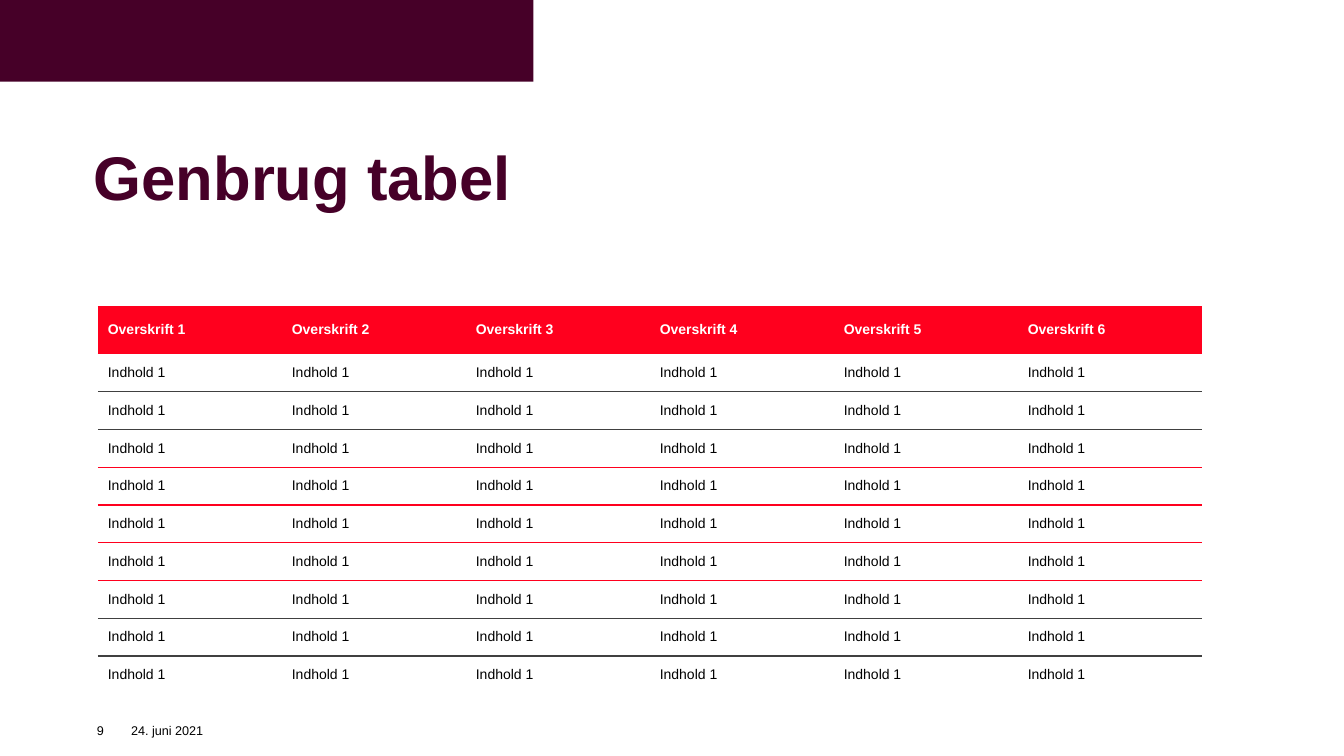
from lxml import etree
from pptx import Presentation
from pptx.dml.color import RGBColor
from pptx.enum.shapes import MSO_SHAPE
from pptx.enum.text import MSO_ANCHOR
from pptx.oxml.ns import qn
from pptx.util import Inches, Pt

TITLE = "Genbrug tabel"
DATE = "24. juni 2021"
PAGE = "9"
HEADS = [f"Overskrift {n}" for n in range(1, 7)]
BODY = [["Indhold 1"] * len(HEADS) for _ in range(9)]

PLUM = RGBColor(0x46, 0x00, 0x28)
RED = RGBColor(0xFF, 0x00, 0x1E)
GREY = RGBColor(0x40, 0x40, 0x40)
BLACK = RGBColor(0, 0, 0)
WHITE = RGBColor(0xFF, 0xFF, 0xFF)
# Line under each row; the last row has none
RULES = [RED, GREY, GREY, RED, RED, RED, RED, GREY, GREY, None]

FONT = "Arial"
TOP, MIDDLE = MSO_ANCHOR.TOP, MSO_ANCHOR.MIDDLE
WIDE, HIGH = 13.33, 7.5
LEFT, UPPER, SPAN = 0.97, 3.04, 10.95
HEAD_H, ROW_H = 0.47, 0.375


def style(para, size, color, bold=False):
    font = para.font
    font.name, font.size, font.bold = FONT, Pt(size), bold
    font.color.rgb = color


def add_text(slide, text, box, size, color, bold=False, anchor=TOP):
    frame = slide.shapes.add_textbox(*map(Inches, box)).text_frame
    frame.word_wrap = True
    frame.vertical_anchor = anchor
    frame.margin_left = frame.margin_right = 0
    frame.margin_top = frame.margin_bottom = 0
    para = frame.paragraphs[0]
    para.text = text
    style(para, size, color, bold)
    return para


def set_edge(cell, tag, color):
    """Draw one cell edge, or clear it when color is None."""
    props = cell._tc.get_or_add_tcPr()
    edge = etree.Element(qn(tag), w=str(Pt(1)))
    if color is None:
        etree.SubElement(edge, qn("a:noFill"))
    else:
        fill = etree.SubElement(edge, qn("a:solidFill"))
        etree.SubElement(fill, qn("a:srgbClr"), val=str(color))
    props.append(edge)


def fill_cell(cell, text, head, above, below):
    cell.text = text
    cell.vertical_anchor = MIDDLE
    cell.margin_left = cell.margin_right = Inches(0.1)
    cell.margin_top = cell.margin_bottom = 0
    style(cell.text_frame.paragraphs[0], 10, WHITE if head else BLACK, head)
    for tag, color in (("a:lnL", None), ("a:lnR", None),
                       ("a:lnT", above), ("a:lnB", below)):
        set_edge(cell, tag, color)
    cell.fill.solid()
    cell.fill.fore_color.rgb = RED if head else WHITE


def add_grid(slide):
    rows = [HEADS] + BODY
    high = HEAD_H + ROW_H * len(BODY)
    table = slide.shapes.add_table(
        len(rows), len(HEADS),
        *map(Inches, (LEFT, UPPER, SPAN, high))).table
    table.horz_banding = False
    for col in table.columns:
        col.width = Inches(SPAN / len(HEADS))
    above = RED
    for r, (texts, below) in enumerate(zip(rows, RULES)):
        table.rows[r].height = Inches(ROW_H if r else HEAD_H)
        for c, text in enumerate(texts):
            fill_cell(table.cell(r, c), text, r == 0, above, below)
        above = below


def main():
    deck = Presentation()
    deck.slide_width, deck.slide_height = Inches(WIDE), Inches(HIGH)
    slide = deck.slides.add_slide(deck.slide_layouts[6])

    band = slide.shapes.add_shape(
        MSO_SHAPE.RECTANGLE, 0, 0, Inches(5.29), Inches(0.81))
    band.shadow.inherit = False
    band.fill.solid()
    band.fill.fore_color.rgb = PLUM
    band.line.fill.background()

    title = add_text(slide, TITLE, (0.93, 1.5, 10, 1.37), 44, PLUM, True)
    title.line_spacing = 0.83
    add_text(slide, DATE, (1.3, 7.15, 1.36, 0.2), 9, BLACK, anchor=MIDDLE)
    add_text(slide, PAGE, (0.96, 7.15, 0.28, 0.2), 9, BLACK, anchor=MIDDLE)
    add_grid(slide)
    deck.save("out.pptx")


if __name__ == "__main__":
    main()
